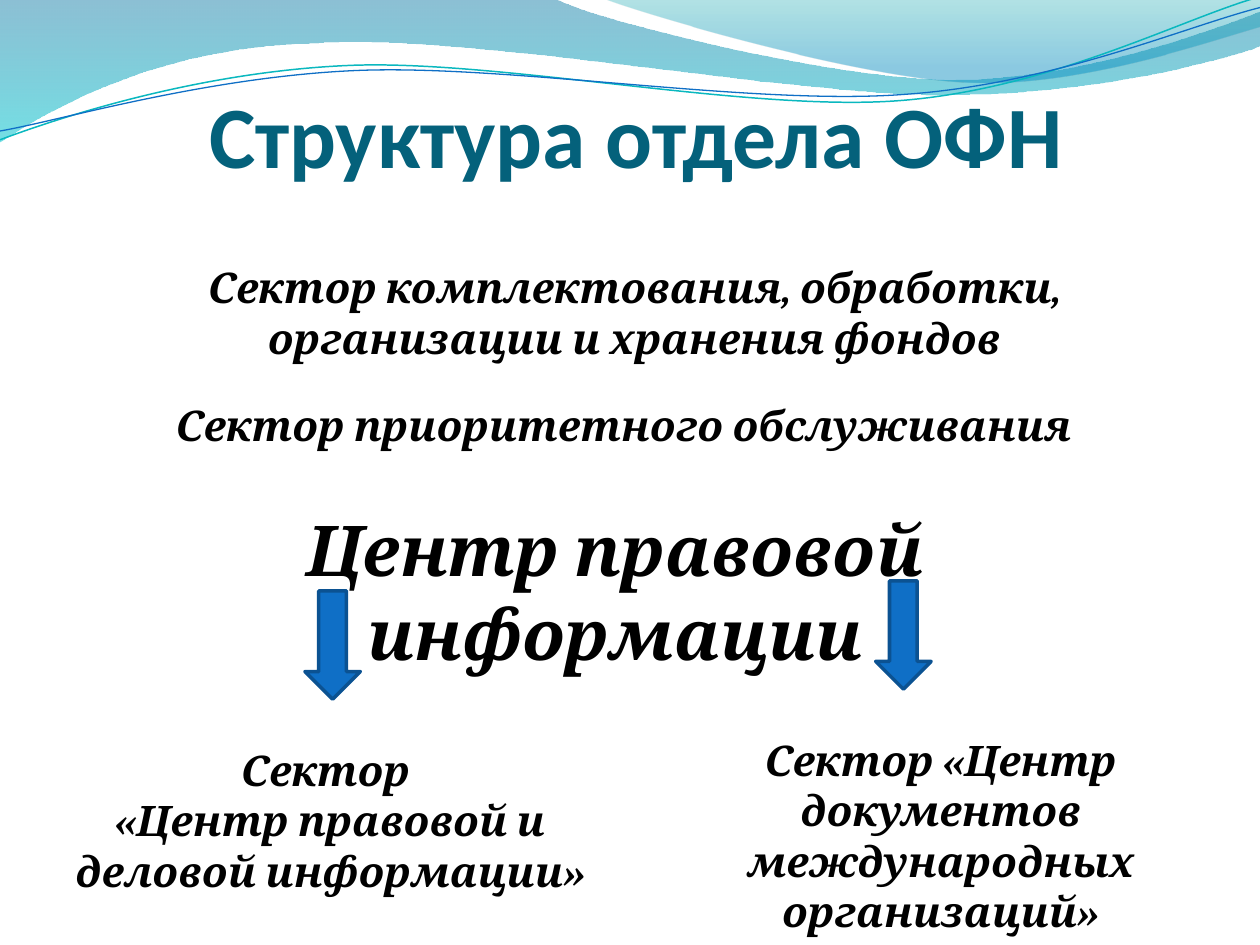
"""Build a slide that shows the structure of a library department."""
from lxml import etree
from pptx import Presentation
from pptx.dml.color import RGBColor
from pptx.enum import shapes, text
from pptx.oxml import ns
from pptx.util import Inches, Pt

BLACK = RGBColor(0x00, 0x00, 0x00)
TITLE_TEAL = RGBColor(0x04, 0x61, 0x7B)
ARROW_BLUE = RGBColor(0x0F, 0x6F, 0xC6)
ARROW_EDGE = RGBColor(0x0B, 0x52, 0x92)
LINE_TEAL = RGBColor(0x0A, 0xB8, 0xBF)
DEEP_BLUE = RGBColor(0x00, 0x74, 0xA1)
AQUA = RGBColor(0x00, 0xC6, 0xCF)
GREEN_TEAL = RGBColor(0x00, 0xA1, 0xA9)
SKY_BLUE = RGBColor(0x00, 0x8B, 0xBF)

# Each segment holds one end point (a line) or two controls and an end point (a curve).
WIDE_WAVE = [
    [(0, 0)], [(4.4, -0.01)],
    [(4.76, 0.17), (6.64, 0.63), (7.58, 0.63)],
    [(8.53, 0.63), (9.58, 0.26), (10, 0.09)],
    [(10.01, 0.36)],
    [(9.83, 0.44), (8.7, 0.76), (7.46, 0.75)],
    [(6.22, 0.75), (3.82, 0.28), (2.57, 0.34)],
    [(1.29, 0.36), (0.46, 0.83), (-0.01, 1.13)],
    [(0, 0)],
]
RIGHT_WAVE = [
    [(4.79, -0.01)],
    [(5.09, 0.11), (6.82, 0.62), (7.69, 0.65)],
    [(8.56, 0.69), (9.61, 0.32), (10, 0.21)],
    [(10, 0)],
    [(4.79, -0.01)],
]
TEAL_LINE = [
    [(0, 1.11)],
    [(0.48, 0.93), (1.58, 0.57), (2.77, 0.52)],
    [(3.95, 0.47), (5.93, 0.89), (7.13, 0.8)],
    [(8.33, 0.71), (9.38, 0.15), (9.98, -0.02)],
]
BLUE_LINE = [
    [(0, 1.04)],
    [(0.47, 0.96), (1.64, 0.61), (2.83, 0.56)],
    [(4.03, 0.51), (5.97, 0.84), (7.17, 0.75)],
    [(8.36, 0.67), (9.41, 0.21), (10, 0.06)],
]


def bend(shape, segments):
    """Turn the straight segments that have control points into curves."""
    straight = list(shape._element.spPr.iter(ns.qn("a:lnTo")))
    for line, segment in zip(straight, segments[1:]):
        if len(segment) == 1:
            continue
        curve = etree.Element(ns.qn("a:cubicBezTo"))
        for x, y in segment:
            point = etree.SubElement(curve, ns.qn("a:pt"))
            point.set("x", str(Inches(x) - shape.left))
            point.set("y", str(Inches(y) - shape.top))
        line.getparent().replace(line, curve)


def add_outline(slide, segments, close):
    """Draw a curved freeform along the segments."""
    points = [(Inches(x), Inches(y)) for x, y in (segment[-1] for segment in segments)]
    builder = slide.shapes.build_freeform(*points[0])
    builder.add_line_segments(points[1:], close=close)
    shape = builder.convert_to_shape()
    shape.shadow.inherit = False
    bend(shape, segments)
    return shape


def add_wave(slide, segments, stops):
    """Add a wave with a vertical, translucent gradient."""
    shape = add_outline(slide, segments, True)
    shape.line.fill.background()
    shape.fill.gradient()
    shape.fill.gradient_angle = 270
    for stop, (position, color, opacity) in zip(shape.fill.gradient_stops, stops):
        stop.position = position
        stop.color.rgb = color
    colors = shape._element.spPr.iter(ns.qn("a:srgbClr"))
    for element, (position, color, opacity) in zip(colors, stops):
        etree.SubElement(element, ns.qn("a:alpha")).set("val", str(opacity * 1000))


def add_wave_line(slide, segments, color, width):
    """Add a thin open curve."""
    shape = add_outline(slide, segments, False)
    shape.fill.background()
    shape.line.color.rgb = color
    shape.line.width = Pt(width)


def format_paragraph(paragraph, name, size, color, italic):
    """Centre a paragraph and set its bold font."""
    paragraph.alignment = text.PP_ALIGN.CENTER
    font = paragraph.font
    font.name, font.size, font.bold, font.italic = name, Pt(size), True, italic
    font.color.rgb = color


def set_title(slide, wording):
    """Place the title in front of the waves."""
    title = slide.shapes.title
    slide.shapes._spTree.append(title._element)
    title.left, title.top = Inches(0.55), Inches(0.23)
    title.width, title.height = Inches(9), Inches(1.25)
    frame = title.text_frame
    frame.text = wording
    frame.auto_size = text.MSO_AUTO_SIZE.NONE
    frame.vertical_anchor = text.MSO_ANCHOR.BOTTOM
    frame.margin_left = frame.margin_right = frame.margin_bottom = 0
    format_paragraph(frame.paragraphs[0], "Calibri", 50, TITLE_TEAL, False)


def add_unit(slide, left, top, width, height, wording, size=24, margin_top=0.05):
    """Add the name of a department unit."""
    box = slide.shapes.add_textbox(Inches(left), Inches(top), Inches(width), Inches(height))
    frame = box.text_frame
    frame.word_wrap = True
    frame.margin_top = Inches(margin_top)
    frame.text = wording
    for paragraph in frame.paragraphs:
        format_paragraph(paragraph, "Cambria", size, BLACK, True)


def add_down_arrow(slide, left, top):
    """Add a blue arrow that points down."""
    arrow = slide.shapes.add_shape(shapes.MSO_SHAPE.DOWN_ARROW, Inches(left), Inches(top),
                                   Inches(0.44), Inches(0.86))
    arrow.shadow.inherit = False
    arrow.fill.solid()
    arrow.fill.fore_color.rgb = ARROW_BLUE
    arrow.line.color.rgb = ARROW_EDGE
    arrow.line.width = Pt(2)


def main():
    """Build and save the slide."""
    presentation = Presentation()
    presentation.slide_width, presentation.slide_height = Inches(10), Inches(7.5)
    slide = presentation.slides.add_slide(presentation.slide_layouts[5])

    add_wave(slide, WIDE_WAVE, [(0, DEEP_BLUE, 45), (1, AQUA, 55)])
    add_wave(slide, RIGHT_WAVE, [(0, GREEN_TEAL, 30), (0.8, SKY_BLUE, 45)])
    add_wave_line(slide, TEAL_LINE, LINE_TEAL, 0.85)
    add_wave_line(slide, BLUE_LINE, ARROW_BLUE, 0.75)
    set_title(slide, "Структура отдела ОФН")

    add_unit(slide, 1.48, 3.44, 6.8, 1.99, "Центр правовой информации", 40, 0.58)
    add_unit(slide, 0.47, 5.86, 4.3, 1.31,
             "Сектор \n«Центр правовой и деловой информации»")
    add_unit(slide, 5.16, 5.78, 4.61, 2.02,
             "Сектор «Центр документов международных организаций»")
    add_unit(slide, 1.17, 2.03, 7.73, 1.21,
             "Сектор комплектования, обработки, организации и хранения фондов")
    add_unit(slide, 1.17, 3.12, 7.56, 0.81, "Сектор приоритетного обслуживания")

    add_down_arrow(slide, 2.42, 4.69)
    add_down_arrow(slide, 6.95, 4.61)
    presentation.save("out.pptx")


if __name__ == "__main__":
    main()
